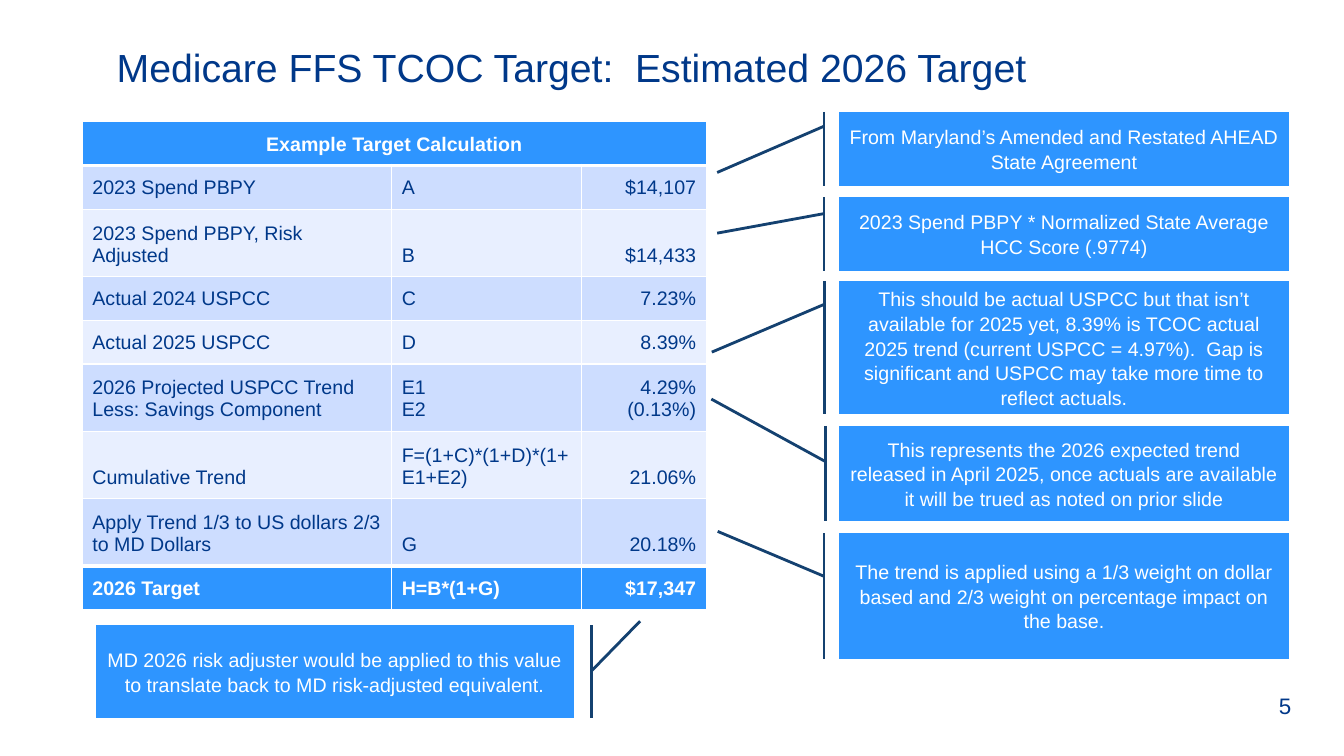
from lxml.etree import SubElement
from pptx import Presentation
from pptx.dml.color import RGBColor
from pptx.enum.shapes import MSO_SHAPE
from pptx.enum.text import MSO_ANCHOR, PP_ALIGN
from pptx.oxml.ns import qn
from pptx.util import Pt

COLORS = {
    "navy": "003889",
    "blue": "2E95FF",
    "band_dark": "CDDDFF",
    "band_light": "E8EFFF",
    "accent": "144170",
    "white": "FFFFFF",
}

TITLE = "Medicare FFS TCOC Target:  Estimated 2026 Target"
PAGE_NUMBER = "5"

TABLE_ROWS = [
    ("Example Target Calculation", "", ""),
    ("2023 Spend PBPY", "A", "$14,107"),
    ("2023 Spend PBPY, Risk Adjusted", "B", "$14,433"),
    ("Actual 2024 USPCC", "C", "7.23%"),
    ("Actual 2025 USPCC", "D", "8.39%"),
    ("2026 Projected USPCC Trend\nLess: Savings Component", "E1\nE2", "4.29%\n(0.13%)"),
    ("Cumulative Trend", "F=(1+C)*(1+D)*(1+E1+E2)", "21.06%"),
    ("Apply Trend 1/3 to US dollars 2/3 to MD Dollars", "G", "20.18%"),
    ("2026 Target", "H=B*(1+G)", "$17,347"),
]
COLUMN_WIDTHS = (221, 135.4, 89.3)
ROW_HEIGHT = 29.5
COLUMN_ALIGNMENTS = (PP_ALIGN.LEFT, PP_ALIGN.LEFT, PP_ALIGN.RIGHT)

# Text, top, height, and leader line as (start y, start x, end y, end x) fractions
RIGHT_CALLOUTS = [
    ("From Maryland’s Amended and Restated AHEAD State Agreement",
     80, 52.6, (0.194, -0.033, 0.822, -0.27)),
    ("2023 Spend PBPY * Normalized State Average HCC Score (.9774)",
     140.8, 52.6, (0.225, -0.033, 0.49, -0.27)),
    ("This should be actual USPCC but that isn’t available for 2025 yet, 8.39% is TCOC "
     "actual 2025 trend (current USPCC = 4.97%).  Gap is significant and USPCC may take "
     "more time to reflect actuals.",
     200.8, 95, (0.174, -0.032, 0.534, -0.282)),
    ("This represents the 2026 expected trend released in April 2025, once actuals are "
     "available it will be trued as noted on prior slide",
     304.2, 68, (0.374, -0.03, -0.282, -0.283)),
    ("The trend is applied using a 1/3 weight on dollar based and 2/3 weight on "
     "percentage impact on the base.",
     380.8, 89.6, (0.344, -0.033, -0.014, -0.269)),
]
RIGHT_LEFT, RIGHT_WIDTH = 599.2, 321.8
BOTTOM_CALLOUT = (
    "MD 2026 risk adjuster would be applied to this value to translate back to MD "
    "risk-adjusted equivalent.",
    446.6, 66, (0.497, 1.037, -0.044, 1.139))
BOTTOM_LEFT, BOTTOM_WIDTH = 68.4, 341.4


def color(name):
    return RGBColor.from_string(COLORS[name])


def write_text(text_frame, text, size, color_name, bold=False, **paragraph_format):
    text_frame.word_wrap = True
    text_frame.text = text
    for paragraph in text_frame.paragraphs:
        for name, value in paragraph_format.items():
            setattr(paragraph, name, value)
        font_format = {"name": "Arial", "size": Pt(size), "bold": bold}
        for run in paragraph.runs:
            for name, value in font_format.items():
                setattr(run.font, name, value)
            run.font.color.rgb = color(color_name)


def add_label(slide, text, box, size, anchor):
    label = slide.shapes.add_textbox(*map(Pt, box))
    label.text_frame.vertical_anchor = anchor
    write_text(label.text_frame, text, size, "navy")


def add_borders(cell, top, bottom):
    """Draw white borders; the top and bottom widths are in points."""
    properties = cell._tc.get_or_add_tcPr()
    for side, width in (("L", 1), ("R", 1), ("T", top), ("B", bottom)):
        line = SubElement(properties, qn(f"a:ln{side}"), w=str(Pt(width)))
        fill = SubElement(line, qn("a:solidFill"))
        SubElement(fill, qn("a:srgbClr"), val=COLORS["white"])


def add_target_table(slide):
    last = len(TABLE_ROWS) - 1
    frame = slide.shapes.add_table(
        len(TABLE_ROWS), len(COLUMN_WIDTHS), Pt(58.8), Pt(87),
        Pt(sum(COLUMN_WIDTHS)), Pt(ROW_HEIGHT * len(TABLE_ROWS)))
    table = frame.table
    table.first_row = table.horz_banding = False
    for column, width in zip(table.columns, COLUMN_WIDTHS):
        column.width = Pt(width)
    cell_format = {"vertical_anchor": MSO_ANCHOR.BOTTOM}
    for side in ("left", "right", "top", "bottom"):
        cell_format[f"margin_{side}"] = Pt(7.2)

    for row_index, row in enumerate(TABLE_ROWS):
        table.rows[row_index].height = Pt(ROW_HEIGHT)
        strong = row_index in (0, last)
        band = "band_dark" if row_index % 2 else "band_light"
        for column_index, text in enumerate(row):
            cell = table.cell(row_index, column_index)
            for name, value in cell_format.items():
                setattr(cell, name, value)
            add_borders(cell,
                        top=3 if row_index in (1, last) else 1,
                        bottom=3 if row_index in (0, last - 1) else 1)
            cell.fill.solid()
            cell.fill.fore_color.rgb = color("blue" if strong else band)
            alignment = COLUMN_ALIGNMENTS[column_index] if row_index else PP_ALIGN.CENTER
            write_text(cell.text_frame, text, 14, "white" if strong else "navy",
                       bold=strong, alignment=alignment)
    table.cell(0, 0).merge(table.cell(0, len(COLUMN_WIDTHS) - 1))


def add_callout(slide, left, width, text, top, height, leader):
    callout = slide.shapes.add_shape(
        MSO_SHAPE.LINE_CALLOUT_1_ACCENT_BAR, Pt(left), Pt(top), Pt(width), Pt(height))
    for index, fraction in enumerate(leader):
        callout.adjustments[index] = fraction
    callout.shadow.inherit = False
    callout.fill.solid()
    callout.fill.fore_color.rgb = color("blue")
    callout.line.color.rgb = color("accent")
    callout.line.width = Pt(2)
    callout.text_frame.vertical_anchor = MSO_ANCHOR.MIDDLE
    write_text(callout.text_frame, text, 14, "white",
               alignment=PP_ALIGN.CENTER, line_spacing=1.05)


def main():
    presentation = Presentation()
    presentation.slide_width, presentation.slide_height = Pt(960), Pt(540)
    slide = presentation.slides.add_slide(presentation.slide_layouts[6])
    add_label(slide, PAGE_NUMBER, (906.5, 489.6, 45.4, 28.8), 16, MSO_ANCHOR.MIDDLE)
    add_label(slide, TITLE, (76.3, 27.4, 828, 47.5), 28, MSO_ANCHOR.TOP)
    add_target_table(slide)
    for callout in RIGHT_CALLOUTS:
        add_callout(slide, RIGHT_LEFT, RIGHT_WIDTH, *callout)
    add_callout(slide, BOTTOM_LEFT, BOTTOM_WIDTH, *BOTTOM_CALLOUT)
    presentation.save("out.pptx")


if __name__ == "__main__":
    main()
